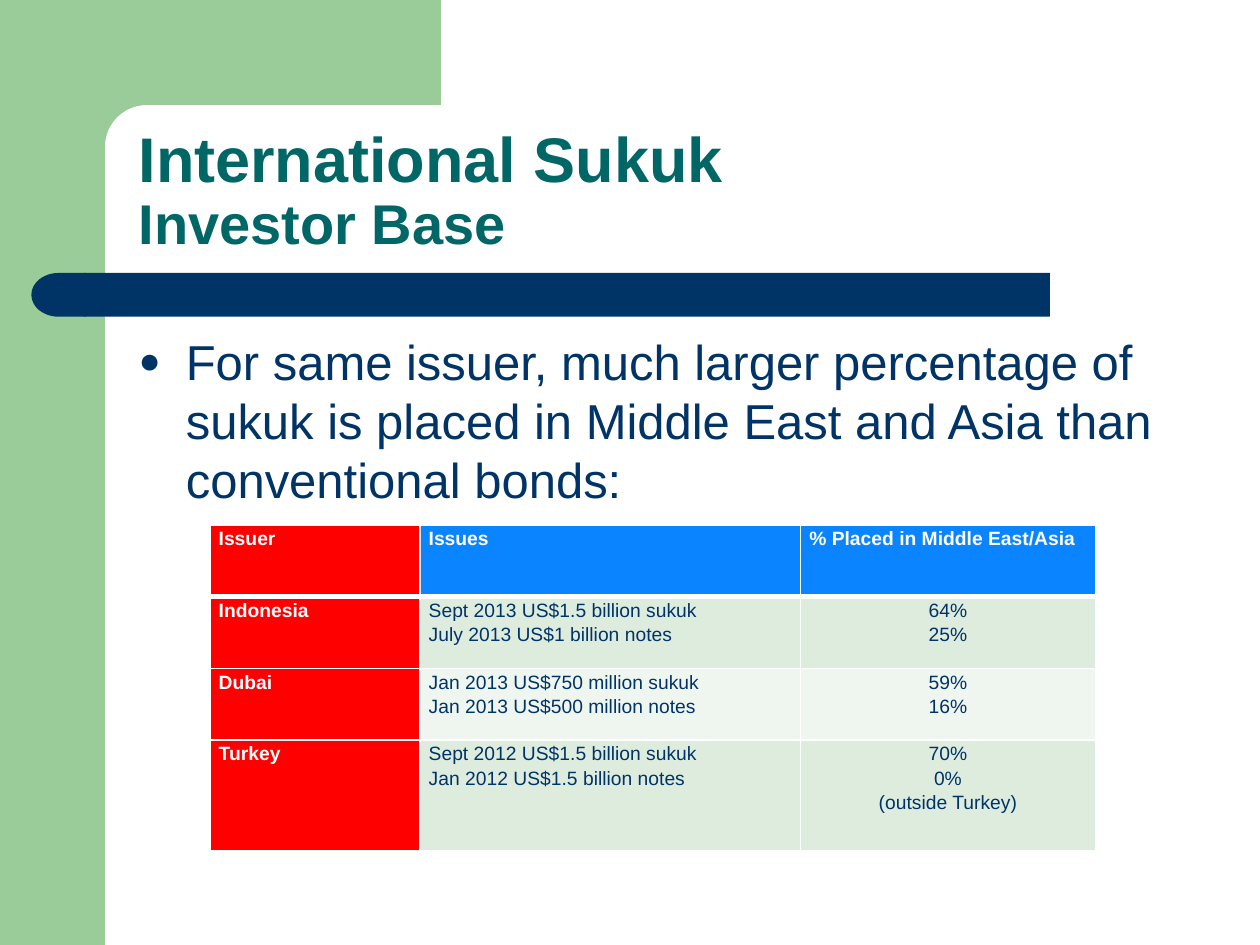
from lxml.etree import SubElement
from pptx import Presentation
from pptx.dml.color import RGBColor
from pptx.enum.shapes import MSO_SHAPE
from pptx.enum.text import MSO_ANCHOR, MSO_AUTO_SIZE, PP_ALIGN
from pptx.oxml.ns import qn
from pptx.util import Pt

NAVY, TEAL, GREEN, WHITE = "003366", "006666", "99CC99", "FFFFFF"
RED, BLUE, BAND_DARK, BAND_LIGHT = "FF0000", "0A85FF", "DEECDE", "EFF6EF"


def rgb(color):
    return RGBColor.from_string(color)


def style(p, size, color, bold=False):
    for r in p.runs:
        r.font.name = "Arial"
        r.font.size = Pt(size)
        r.font.bold = bold
        r.font.color.rgb = rgb(color)


prs = Presentation()
prs.slide_width, prs.slide_height = Pt(720), Pt(540)
s = prs.slides.add_slide(prs.slide_layouts[1])
title, body = s.placeholders

# Background panels and title bar
RECT, ROUND, DELAY = MSO_SHAPE.RECTANGLE, MSO_SHAPE.ROUNDED_RECTANGLE, MSO_SHAPE.FLOWCHART_DELAY
for kind, x, y, w, h, color in [
    (RECT, 0, 0, 60, 540, GREEN),
    (RECT, 54, 0, 198, 84, GREEN),
    (ROUND, 60, 60, 402, 48, WHITE),
    (RECT, 48, 156, 552, 25, NAVY),
    (DELAY, 18, 156, 31, 25, NAVY),
]:
    sp = s.shapes.add_shape(kind, Pt(x), Pt(y), Pt(w), Pt(h))
    sp.shadow.inherit = False
    sp.fill.solid()
    sp.fill.fore_color.rgb = rgb(color)
    sp.line.fill.background()
    if kind == ROUND:
        sp.adjustments[0] = 0.5
    if kind == DELAY:
        sp._element.spPr.xfrm.set("flipH", "1")

# Placeholders go in front of the panels
for ph, y, h, anchor in [(title, 60, 90, MSO_ANCHOR.BOTTOM), (body, 186, 294, MSO_ANCHOR.TOP)]:
    s.shapes._spTree.append(ph._element)
    ph.left, ph.top, ph.width, ph.height = Pt(72), Pt(y), Pt(630), Pt(h)
    ph.text_frame.auto_size = MSO_AUTO_SIZE.NONE
    ph.text_frame.vertical_anchor = anchor

# Title
p = title.text_frame.paragraphs[0]
p.add_run().text = "International Sukuk"
p.add_line_break()
p.add_run().text = "Investor Base"
p.alignment = PP_ALIGN.LEFT
p.line_spacing = 0.9
style(p, 36, TEAL, bold=True)
p.runs[1].font.size = Pt(32)

# Bullet
p = body.text_frame.paragraphs[0]
p.text = ("For same issuer, much larger percentage of sukuk is placed "
          "in Middle East and Asia than conventional bonds:")
p.space_before = Pt(5.6)
style(p, 28, NAVY)
pPr = p._p.get_or_add_pPr()
pPr.set("marL", str(Pt(27)))
pPr.set("indent", str(-Pt(27)))
SubElement(SubElement(pPr, qn("a:buClr")), qn("a:srgbClr"), val=NAVY)
SubElement(pPr, qn("a:buSzPct"), val="75000")
SubElement(pPr, qn("a:buChar"), char="●")

# Table
rows = [
    ["Issuer", "Issues", "% Placed in Middle East/Asia"],
    ["Indonesia", "Sept 2013 US$1.5 billion sukuk\nJuly 2013 US$1 billion notes", "64%\n25%"],
    ["Dubai", "Jan 2013 US$750 million sukuk\nJan 2013 US$500 million notes", "59%\n16%"],
    ["Turkey", "Sept 2012 US$1.5 billion sukuk\nJan 2012 US$1.5 billion notes",
     "70%\n0%\n(outside Turkey)"],
]
widths, heights = [120, 217.5, 168.5], [41, 41, 41, 63]
table = s.shapes.add_table(4, 3, Pt(120), Pt(300), Pt(sum(widths)), Pt(sum(heights))).table
for col, w in zip(table.columns, widths):
    col.width = Pt(w)
for row, h in zip(table.rows, heights):
    row.height = Pt(h)

for i, texts in enumerate(rows):
    for j, text in enumerate(texts):
        cell = table.cell(i, j)
        cell.margin_left = cell.margin_right = Pt(5)
        cell.margin_top = cell.margin_bottom = 0
        cell.text_frame.text = text
        heading = i == 0 or j == 0
        for p in cell.text_frame.paragraphs:
            p.line_spacing = 1.15
            p.alignment = PP_ALIGN.CENTER if i and j == 2 else PP_ALIGN.LEFT
            style(p, 11, WHITE if heading else NAVY, bold=heading)

        # White borders, thicker under the header row
        tcPr = cell._tc.get_or_add_tcPr()
        for side in "LRTB":
            thick = (i, side) in [(0, "B"), (1, "T")]
            ln = SubElement(tcPr, qn("a:ln" + side), w=str(Pt(3 if thick else 1)))
            SubElement(SubElement(ln, qn("a:solidFill")), qn("a:srgbClr"), val=WHITE)
        cell.fill.solid()
        band = BAND_DARK if i % 2 else BAND_LIGHT
        if i == 3:
            band = BAND_DARK
        cell.fill.fore_color.rgb = rgb(RED if j == 0 else BLUE if i == 0 else band)

prs.save("out.pptx")
